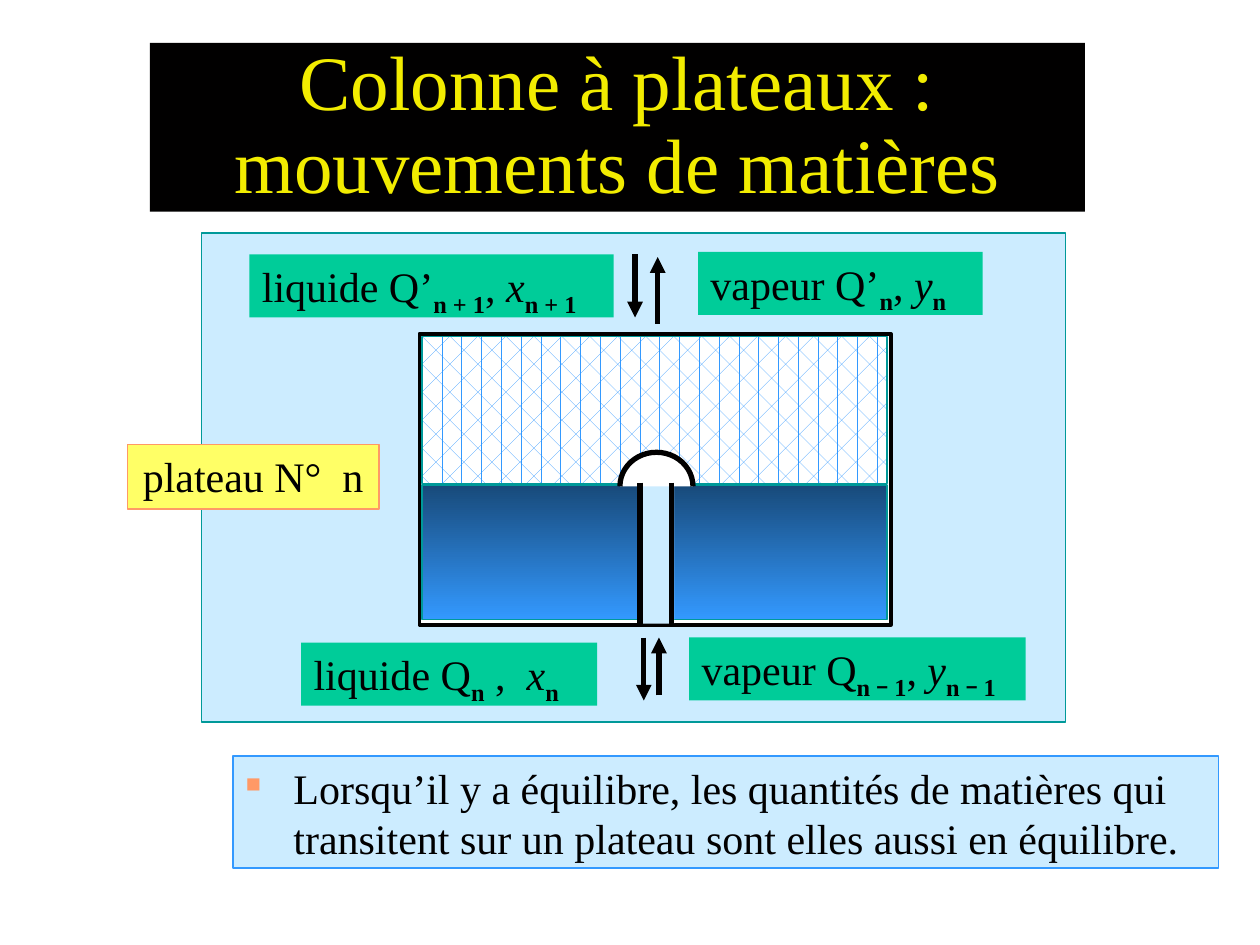
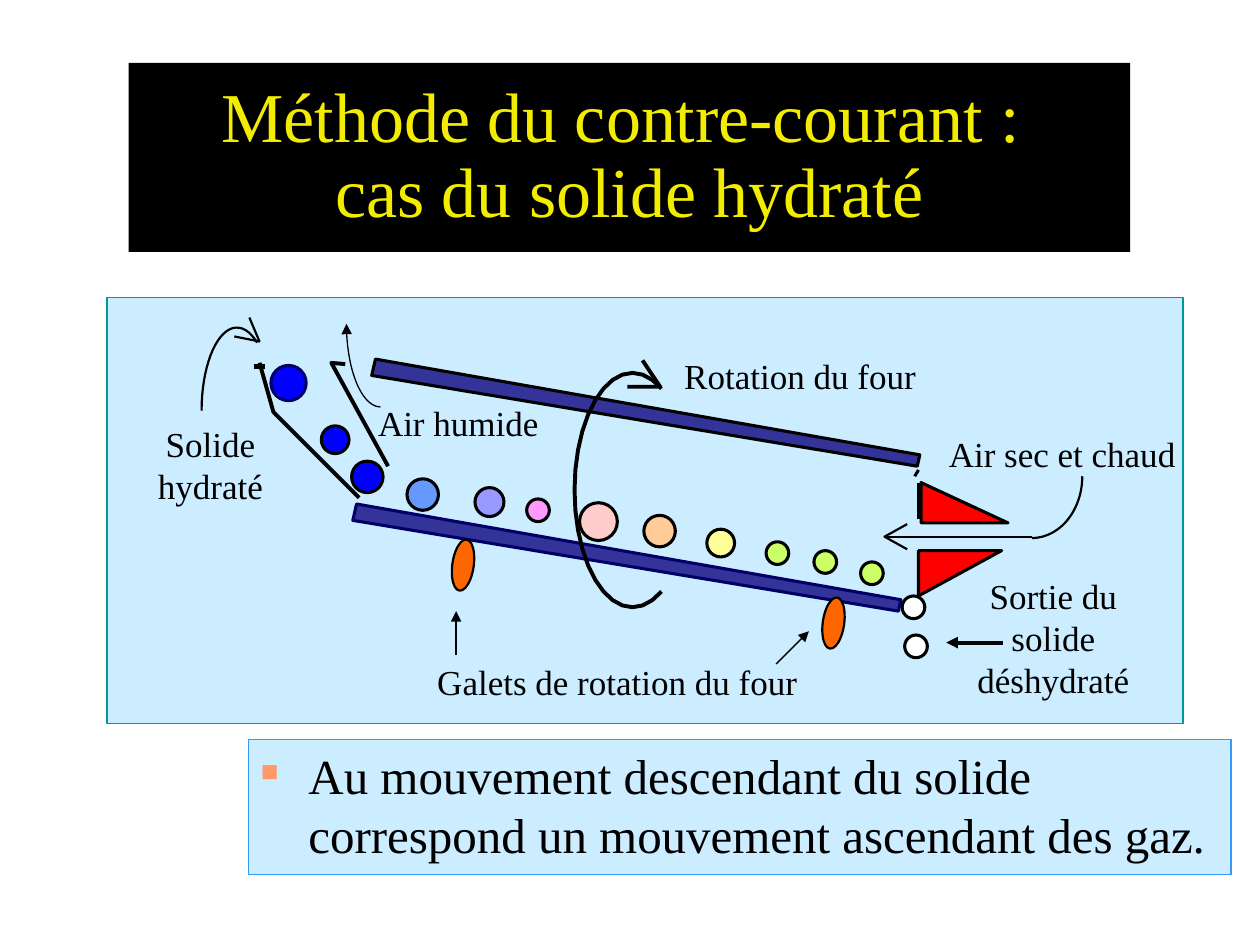
from dataclasses import dataclass
from math import cos, radians, sin
from typing import NamedTuple, Optional

from lxml.etree import SubElement
from pptx import Presentation
from pptx.dml.color import RGBColor
from pptx.enum.dml import MSO_PATTERN
from pptx.enum.shapes import MSO_CONNECTOR, MSO_SHAPE
from pptx.enum.text import MSO_ANCHOR, PP_ALIGN
from pptx.oxml.ns import qn
from pptx.util import Inches, Pt


@dataclass(frozen=True)
class Theme:
    font: str = "Times New Roman"
    symbol_font: str = "Arial"
    ink: str = "010000"
    title: str = "F2EC00"
    panel: str = "CCECFF"
    panel_edge: str = "009999"
    body_edge: str = "3399FF"
    bullet: str = "FF9966"
    label: str = "00CC99"
    tag: str = "FFFF66"
    white: str = "FFFFFF"
    water_top: str = "184A7A"
    wall: str = "333399"
    navy: str = "000066"
    roller: str = "FF6600"
    nozzle: str = "FF0000"
    label_size: float = 24
    minus_size: float = 20
    caption_size: float = 20
    thin: float = 0.75
    fine: float = 1.25
    outline: float = 1.75
    thick: float = 2.25
    heavy: float = 3


THEME = Theme()


class Box(NamedTuple):
    left: float
    top: float
    width: float
    height: float


class Point(NamedTuple):
    x: float
    y: float


class Fragment(NamedTuple):
    text: str
    italic: bool = False
    subscript: bool = False
    symbol: bool = False


class StreamLabel(NamedTuple):
    box: Box
    fragments: list[Fragment]


class Arrow(NamedTuple):
    start: Point
    end: Point


class Caption(NamedTuple):
    box: Box
    text: str
    centered: bool = False


class Grain(NamedTuple):
    left: float
    top: float
    diameter: float
    color: str
    edge: str = THEME.ink


def color_of(value: str) -> RGBColor:
    return RGBColor.from_string(value)


def finish(shape, fill: Optional[str], edge: Optional[str], width: float):
    if fill:
        shape.fill.solid()
        shape.fill.fore_color.rgb = color_of(fill)
    else:
        shape.fill.background()
    if edge:
        shape.line.color.rgb = color_of(edge)
        shape.line.width = Pt(width)
    else:
        shape.line.fill.background()
    shape.shadow.inherit = False
    return shape


def add_box(slide, box: Box, fill: Optional[str] = None, edge: Optional[str] = None,
            width: float = THEME.thin, preset=MSO_SHAPE.RECTANGLE):
    shape = slide.shapes.add_shape(preset, *(Inches(value) for value in box))
    return finish(shape, fill, edge, width)


def add_path(slide, points: list[Point], fill: Optional[str] = None, edge: str = THEME.ink,
             width: float = THEME.outline, closed: bool = False):
    corners = [(Inches(x), Inches(y)) for x, y in points]
    builder = slide.shapes.build_freeform(*corners[0])
    builder.add_line_segments(corners[1:], close=closed)
    return finish(builder.convert_to_shape(), fill, edge, width)


def arc(center: Point, rx: float, ry: float, start: int, end: int) -> list[Point]:
    steps = 24
    angles = [radians(start + (end - start) * step / steps) for step in range(steps + 1)]
    return [Point(center.x + rx * cos(angle), center.y - ry * sin(angle)) for angle in angles]


def add_head(shape) -> None:
    SubElement(shape.element.spPr.find(qn("a:ln")), qn("a:tailEnd"), type="triangle")


def add_line(slide, start: Point, end: Point, width: float, head: bool = False) -> None:
    connector = slide.shapes.add_connector(
        MSO_CONNECTOR.STRAIGHT, *(Inches(value) for value in (*start, *end)))
    connector.line.color.rgb = color_of(THEME.ink)
    connector.line.width = Pt(width)
    if head:
        add_head(connector)
    SubElement(connector.element.spPr, qn("a:effectLst"))


def set_font(font, size: float, color: str = THEME.ink, name: str = THEME.font) -> None:
    font.name = name
    font.size = Pt(size)
    font.color.rgb = color_of(color)


def write(shape, text: str, size: float, color: str = THEME.ink,
          align=PP_ALIGN.LEFT, anchor=MSO_ANCHOR.TOP):
    frame = shape.text_frame
    frame.word_wrap = True
    frame.vertical_anchor = anchor
    paragraph = frame.paragraphs[0]
    paragraph.text = text
    paragraph.alignment = align
    set_font(paragraph.font, size, color)
    return paragraph


def add_title(slide, box: Box, text: str, size: float) -> None:
    paragraph = write(add_box(slide, box, THEME.ink), text, size, THEME.title,
                      PP_ALIGN.CENTER, MSO_ANCHOR.MIDDLE)
    paragraph.line_spacing = 0.9


def add_body(slide, box: Box, text: str, size: float) -> None:
    frame = add_box(slide, box, THEME.panel, THEME.body_edge).text_frame
    frame.word_wrap = True
    frame.vertical_anchor = MSO_ANCHOR.TOP
    paragraph = frame.paragraphs[0]
    paragraph.text = text
    paragraph.alignment = PP_ALIGN.LEFT
    properties = paragraph._p.get_or_add_pPr()
    properties.set("marL", str(Inches(0.38)))
    properties.set("indent", str(-Inches(0.38)))
    bullet_color = SubElement(properties, qn("a:buClr"))
    SubElement(bullet_color, qn("a:srgbClr"), val=THEME.bullet)
    SubElement(properties, qn("a:buSzPct"), val="50000")
    SubElement(properties, qn("a:buChar"), char="■")
    set_font(paragraph.font, size)


def add_stream_label(slide, label: StreamLabel) -> None:
    frame = add_box(slide, label.box, THEME.label).text_frame
    frame.word_wrap = True
    frame.vertical_anchor = MSO_ANCHOR.TOP
    paragraph = frame.paragraphs[0]
    paragraph.alignment = PP_ALIGN.LEFT
    for fragment in label.fragments:
        run = paragraph.add_run()
        run.text = fragment.text
        if fragment.symbol:
            set_font(run.font, THEME.minus_size, name=THEME.symbol_font)
        else:
            set_font(run.font, THEME.label_size)
        run.font.italic = fragment.italic
        run.font.bold = fragment.subscript
        if fragment.subscript:
            run.font._element.set("baseline", "-25000")


def add_caption(slide, caption: Caption) -> None:
    text_box = slide.shapes.add_textbox(*(Inches(value) for value in caption.box))
    frame = text_box.text_frame
    frame.margin_left = frame.margin_right = frame.margin_top = frame.margin_bottom = 0
    write(text_box, caption.text, THEME.caption_size,
          align=PP_ALIGN.CENTER if caption.centered else PP_ALIGN.LEFT)
    frame.word_wrap = caption.centered


def stream(name: str, variable: str, index: list[Fragment], comma: str = ", ") -> list[Fragment]:
    return [Fragment(name), *index, Fragment(comma), Fragment(variable, italic=True), *index]


def build_plate_slide(slide) -> None:
    add_title(slide, Box(1.19, 0.34, 7.42, 1.34),
              "Colonne à plateaux : mouvements de matières", 44)
    add_body(slide, Box(1.85, 6, 7.82, 0.89),
             "Lorsqu’il y a équilibre, les quantités de matières qui transitent "
             "sur un plateau sont elles aussi en équilibre.", 24)
    add_box(slide, Box(1.6, 1.85, 6.86, 3.88), THEME.panel, THEME.panel_edge)

    plate = [Fragment("n", subscript=True)]
    plate_above = [Fragment("n + 1", subscript=True)]
    plate_below = [Fragment("n ", subscript=True), Fragment("−", subscript=True, symbol=True),
                   Fragment(" 1", subscript=True)]
    for label in (
        StreamLabel(Box(2.39, 5.1, 2.35, 0.5), stream("liquide Q", "x", plate, " ,  ")),
        StreamLabel(Box(5.54, 2, 2.26, 0.5), stream("vapeur Q’", "y", plate)),
        StreamLabel(Box(5.47, 5.06, 2.67, 0.5), stream("vapeur Q", "y", plate_below)),
        StreamLabel(Box(1.98, 2.02, 2.89, 0.5), stream("liquide Q’", "x", plate_above)),
    ):
        add_stream_label(slide, label)
    for arrow in (
        Arrow(Point(5.11, 5.06), Point(5.11, 5.56)),
        Arrow(Point(5.22, 2.57), Point(5.22, 2.04)),
        Arrow(Point(5.23, 5.52), Point(5.23, 5.06)),
        Arrow(Point(5.04, 2.02), Point(5.04, 2.52)),
    ):
        add_line(slide, arrow.start, arrow.end, THEME.heavy, head=True)

    add_box(slide, Box(3.33, 2.65, 3.74, 2.31), THEME.white, THEME.ink, THEME.thick)
    tag = add_box(slide, Box(1.01, 3.53, 2, 0.51), THEME.tag, THEME.bullet)
    write(tag, "plateau N°  n", THEME.label_size, align=PP_ALIGN.CENTER)

    liquid = add_box(slide, Box(3.35, 3.85, 3.69, 1.07), edge=THEME.panel_edge)
    liquid.fill.gradient()
    liquid.fill.gradient_angle = 270
    for stop, color in zip(liquid.fill.gradient_stops, (THEME.water_top, THEME.body_edge)):
        stop.color.rgb = color_of(color)
    vapour = add_box(slide, Box(3.35, 2.67, 3.69, 1.17), edge=THEME.panel_edge)
    vapour.fill.patterned()
    vapour.fill.pattern = MSO_PATTERN.DIVOT
    vapour.fill.fore_color.rgb = color_of(THEME.body_edge)
    vapour.fill.back_color.rgb = color_of(THEME.white)

    add_box(slide, Box(5.08, 3.83, 0.27, 1.12), THEME.panel)
    add_path(slide, arc(Point(5.21, 3.86), 0.29, 0.27, 180, 0), THEME.white, width=THEME.heavy)
    for chimney_side in (5.08, 5.33):
        add_line(slide, Point(chimney_side, 3.83), Point(chimney_side, 4.96), THEME.heavy)


def build_kiln_slide(slide) -> None:
    add_title(slide, Box(1.02, 0.5, 7.95, 1.5),
              "Méthode du contre-courant : \vcas du solide hydraté", 40)
    add_body(slide, Box(1.97, 5.87, 7.8, 1.07),
             "Au mouvement descendant du solide correspond un mouvement ascendant des gaz.", 28)
    add_box(slide, Box(0.85, 2.36, 8.54, 3.38), THEME.panel, THEME.panel_edge)

    wet, dry = "0000FF", "CCFF66"
    for grain in (
        Grain(3.23, 3.8, 0.25, "6699FF"), Grain(3.77, 3.87, 0.23, "9999FF"),
        Grain(4.18, 3.96, 0.18, "FF99FF"), Grain(4.6, 3.99, 0.3, "FFCCCC"),
        Grain(5.11, 4.09, 0.25, "FFCC99"), Grain(5.61, 4.2, 0.22, "FFFF99"),
        Grain(6.08, 4.3, 0.18, dry), Grain(2.79, 3.66, 0.25, wet),
        Grain(2.55, 3.38, 0.22, wet), Grain(2.15, 2.9, 0.28, wet, THEME.navy),
        Grain(6.46, 4.37, 0.18, dry), Grain(6.83, 4.46, 0.18, dry),
        Grain(7.16, 4.73, 0.18, THEME.white), Grain(7.18, 5.04, 0.18, THEME.white),
    ):
        add_box(slide, Box(grain.left, grain.top, grain.diameter, grain.diameter),
                grain.color, grain.edge, THEME.outline, MSO_SHAPE.OVAL)

    for chute_side in (
        [Point(2.06, 2.88), Point(2.17, 3.27), Point(2.85, 3.95)],
        [Point(2.74, 2.89), Point(2.63, 2.88), Point(3.08, 3.7)],
    ):
        add_path(slide, chute_side, width=THEME.thick)
    add_line(slide, Point(2.02, 2.91), Point(2.1, 2.91), THEME.heavy)

    upper_wall = [Point(2.95, 2.98), Point(7.28, 3.7), Point(7.3, 3.61), Point(2.98, 2.85)]
    lower_wall = [Point(x - 0.15, y + 1.15) for x, y in upper_wall]
    add_path(slide, upper_wall, THEME.wall, closed=True)
    add_path(slide, lower_wall, THEME.wall, THEME.navy, closed=True)
    for left, top in ((6.53, 4.74), (3.59, 4.28)):
        roller = add_box(slide, Box(left, top, 0.17, 0.41), THEME.roller, THEME.ink,
                         THEME.fine, MSO_SHAPE.OVAL)
        roller.rotation = 8

    add_path(slide, arc(Point(5.02, 3.89), 0.46, 0.93, 60, 300), width=THEME.thick)
    add_path(slide, [Point(4.98, 3.07), Point(5.24, 3.07), Point(5.1, 2.86)], width=THEME.thick)
    add_path(slide, arc(Point(1.88, 3.26), 0.28, 0.66, 180, 55), width=THEME.fine)
    add_path(slide, [Point(1.86, 2.67), Point(2.06, 2.71), Point(1.98, 2.52)], width=THEME.fine)
    add_head(add_path(slide, arc(Point(3.02, 2.57), 0.27, 0.66, 270, 180), width=THEME.thin))

    for corners in (
        [Point(7.31, 3.83), Point(7.31, 4.15), Point(8, 4.15)],
        [Point(7.29, 4.73), Point(7.29, 4.37), Point(7.95, 4.37)],
    ):
        add_path(slide, corners, THEME.nozzle, closed=True)
    add_line(slide, Point(7.29, 4.12), Point(7.29, 3.83), THEME.outline)
    add_line(slide, Point(7.26, 3.78), Point(7.29, 3.73), THEME.outline)
    add_line(slide, Point(8.19, 4.26), Point(7.02, 4.26), THEME.fine)
    add_path(slide, [Point(7.2, 4.16), Point(7.02, 4.26), Point(7.2, 4.36)], width=THEME.fine)
    add_path(slide, arc(Point(8.19, 3.78), 0.4, 0.49, 270, 360), width=THEME.fine)

    for caption in (
        Caption(Box(5.43, 2.81, 1.85, 0.34), "Rotation du four"),
        Caption(Box(1.22, 3.35, 0.9, 0.67), "Solide hydraté", True),
        Caption(Box(3.47, 5.24, 2.88, 0.34), "Galets de rotation du four"),
        Caption(Box(7.64, 4.56, 1.44, 1), "Sortie du solide déshydraté", True),
        Caption(Box(3, 3.19, 1.35, 0.34), "Air humide"),
        Caption(Box(7.53, 3.43, 1.81, 0.34), "Air sec et chaud"),
    ):
        add_caption(slide, caption)
    add_line(slide, Point(6.16, 5.27), Point(6.42, 5.01), THEME.thin, head=True)
    add_line(slide, Point(3.62, 5.2), Point(3.62, 4.85), THEME.thin, head=True)
    add_line(slide, Point(7.96, 5.1), Point(7.51, 5.1), THEME.thick, head=True)


def main() -> None:
    presentation = Presentation()
    presentation.slide_width = Inches(10)
    presentation.slide_height = Inches(7.5)
    for build in (build_plate_slide, build_kiln_slide):
        build(presentation.slides.add_slide(presentation.slide_layouts[6]))
    presentation.save("out.pptx")


if __name__ == "__main__":
    main()
